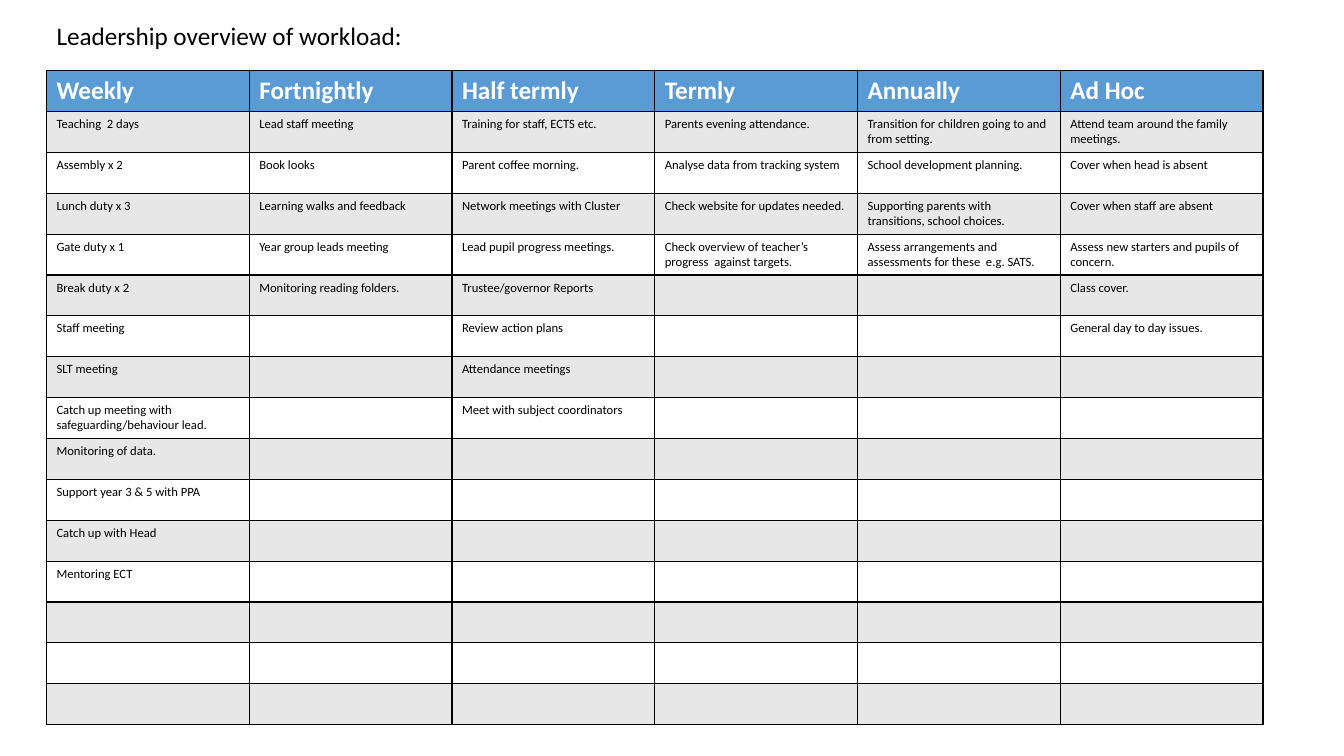
from itertools import zip_longest

from lxml import etree
from pptx import Presentation
from pptx.dml.color import RGBColor
from pptx.enum.text import MSO_ANCHOR, MSO_AUTO_SIZE, PP_ALIGN
from pptx.oxml.ns import qn
from pptx.util import Cm, Pt

LEFT = PP_ALIGN.LEFT
TOP = MSO_ANCHOR.TOP
GROW = MSO_AUTO_SIZE.SHAPE_TO_FIT_TEXT

ROWS = 16
TASKS = {
    "Weekly": [
        "Teaching  2 days", "Assembly x 2", "Lunch duty x 3", "Gate duty x 1",
        "Break duty x 2", "Staff meeting", "SLT meeting",
        "Catch up meeting with safeguarding/behaviour lead.",
        "Monitoring of data.", "Support year 3 & 5 with PPA",
        "Catch up with Head", "Mentoring ECT",
    ],
    "Fortnightly": [
        "Lead staff meeting", "Book looks", "Learning walks and feedback",
        "Year group leads meeting", "Monitoring reading folders.",
    ],
    "Half termly": [
        "Training for staff, ECTS etc.", "Parent coffee morning.",
        "Network meetings with Cluster", "Lead pupil progress meetings.",
        "Trustee/governor Reports", "Review action plans",
        "Attendance meetings", "Meet with subject coordinators",
    ],
    "Termly": [
        "Parents evening attendance.", "Analyse data from tracking system",
        "Check website for updates needed.",
        "Check overview of teacher’s progress  against targets.",
    ],
    "Annually": [
        "Transition for children going to and from setting.",
        "School development planning.",
        "Supporting parents with transitions, school choices.",
        "Assess arrangements and assessments for these  e.g. SATS.",
    ],
    "Ad Hoc": [
        "Attend team around the family meetings.", "Cover when head is absent",
        "Cover when staff are absent",
        "Assess new starters and pupils of concern.",
        "Class cover.", "General day to day issues.",
    ],
}


def color(code):
    return RGBColor.from_string(code)


class Page:
    font = "Calibri"
    ink = "000000"
    head = "5B9BD5"
    bands = ("FFFFFF", "E7E7E7")

    def __init__(self, slide):
        self.slide = slide

    def label(self, frame, text, size, ink, bold=False):
        frame.text = text
        for run in frame.paragraphs[0].runs:
            font = run.font
            font.name, font.size, font.bold = self.font, Pt(size), bold
            font.color.rgb = color(ink)

    def title(self, text, left, top, width, height):
        shape = self.slide.shapes.title
        shape.left, shape.top = Cm(left), Cm(top)
        shape.width, shape.height = Cm(width), Cm(height)
        frame = shape.text_frame
        self.label(frame, text, 18, self.ink)
        frame.word_wrap = False
        frame.auto_size = GROW
        frame.vertical_anchor = TOP
        frame.paragraphs[0].alignment = LEFT

    def border(self, cell):
        """Draw a thin line on all four sides; call before filling the cell."""
        props = cell._tc.get_or_add_tcPr()
        for side in ("a:lnL", "a:lnR", "a:lnT", "a:lnB"):
            line = etree.SubElement(props, qn(side), w=str(Pt(1)))
            fill = etree.SubElement(line, qn("a:solidFill"))
            etree.SubElement(fill, qn("a:srgbClr"), val=self.ink)

    def table(self, rows, left, top, wide, high):
        """Add a banded grid whose cells are all wide by high."""
        count = len(rows[0])
        grid = self.slide.shapes.add_table(
            len(rows), count, Cm(left), Cm(top),
            Cm(wide * count), Cm(high * len(rows))).table
        for col in grid.columns:
            col.width = Cm(wide)
        for i, row in enumerate(rows):
            grid.rows[i].height = Cm(high)
            for j, text in enumerate(row):
                cell = grid.cell(i, j)
                self.border(cell)
                cell.fill.solid()
                cell.fill.fore_color.rgb = color(self.bands[i % 2] if i else self.head)
                if i:
                    self.label(cell.text_frame, text, 9, self.ink)
                else:
                    self.label(cell.text_frame, text, 18, "FFFFFF", True)


def main():
    deck = Presentation()
    deck.slide_width, deck.slide_height = Cm(33.87), Cm(19.05)
    page = Page(deck.slides.add_slide(deck.slide_layouts[5]))
    page.title("Leadership overview of workload:", 1.17, 0.38, 9.32, 1.03)
    rows = [tuple(TASKS), *zip_longest(*TASKS.values(), fillvalue="")]
    rows += [("",) * len(TASKS)] * (ROWS - len(rows))
    page.table(rows, 1.17, 1.78, 5.11, 1.03)
    deck.save("out.pptx")


if __name__ == "__main__":
    main()
